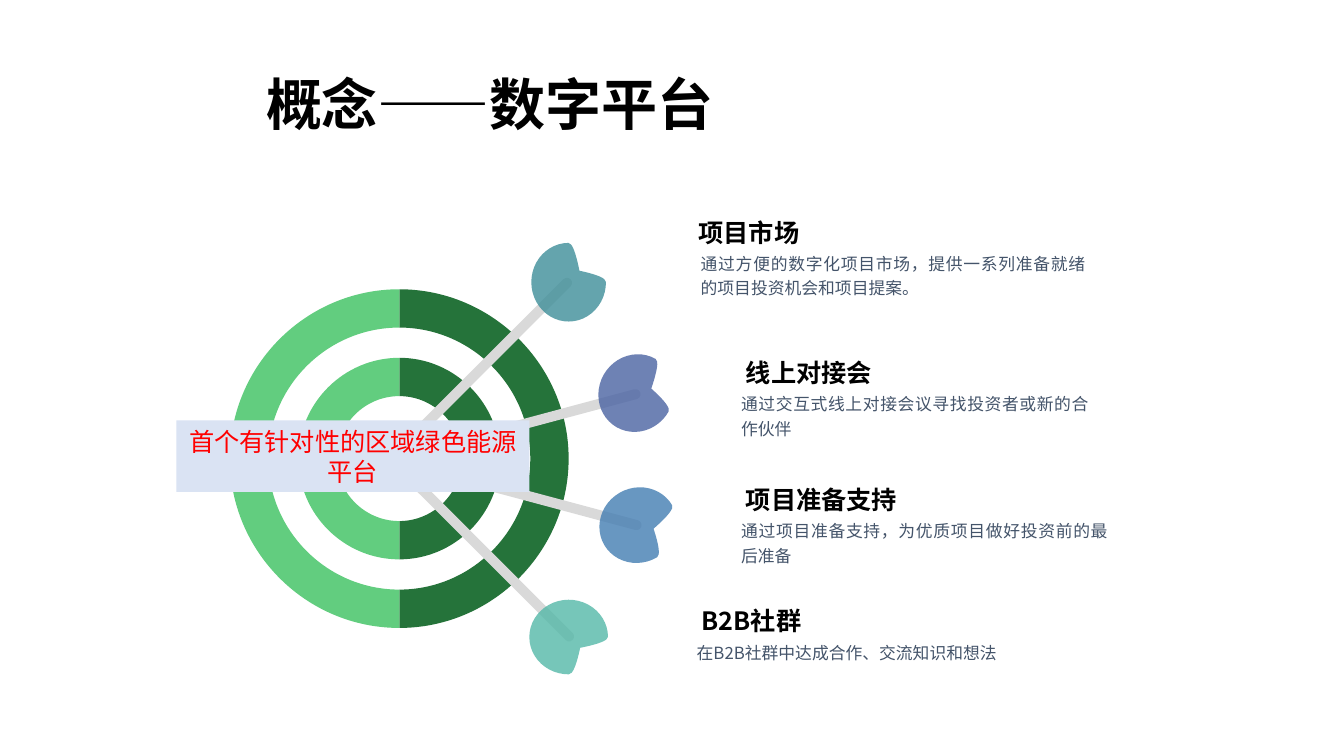
from dataclasses import dataclass
from typing import Any

from lxml.etree import SubElement
from pptx import Presentation
from pptx.dml.color import RGBColor
from pptx.enum.shapes import MSO_SHAPE
from pptx.enum.text import MSO_ANCHOR, PP_ALIGN
from pptx.oxml.ns import qn
from pptx.shapes.autoshape import Shape
from pptx.slide import Slide
from pptx.util import Inches, Pt


@dataclass(frozen=True)
class Theme:
    font: str = "Noto Sans CJK SC"
    ink: str = "000000"
    body_ink: str = "44546A"
    banner_ink: str = "FF0000"
    banner_fill: str = "DAE3F3"
    ring_dark: str = "25733A"
    ring_light: str = "62CD7F"
    shaft: str = "D9D9D9"
    title_size: int = 40
    heading_size: int = 18
    body_size: int = 12


@dataclass(frozen=True)
class Frame:
    left: float
    top: float
    width: float
    height: float

    def lengths(self) -> tuple[Inches, ...]:
        return tuple(map(Inches, (self.left, self.top, self.width, self.height)))


@dataclass(frozen=True)
class TextStyle:
    size: int
    color: str
    bold: bool
    frame: dict[str, Any]
    para: dict[str, Any]


@dataclass(frozen=True)
class Topic:
    heading: str
    heading_frame: Frame
    body: str
    body_frame: Frame


@dataclass(frozen=True)
class Dart:
    angle: float
    shaft_x: float
    shaft_y: float
    flight_x: float
    flight_y: float
    color: str


THEME = Theme()
TITLE = TextStyle(THEME.title_size, THEME.ink, True,
                  {"word_wrap": True, "vertical_anchor": MSO_ANCHOR.MIDDLE},
                  {"line_spacing": 0.9})
HEADING = TextStyle(THEME.heading_size, THEME.ink, True,
                    {"word_wrap": True, "vertical_anchor": MSO_ANCHOR.MIDDLE}, {})
BODY = TextStyle(THEME.body_size, THEME.body_ink, False,
                 {"word_wrap": True, "margin_left": Inches(0.09),
                  "margin_right": Inches(0.09), "margin_top": Inches(0.04),
                  "margin_bottom": Inches(0.04)},
                 {"alignment": PP_ALIGN.JUSTIFY, "line_spacing": 1.2,
                  "space_before": Pt(2.4)})
BANNER = TextStyle(THEME.heading_size, THEME.banner_ink, False,
                   {"word_wrap": True, "vertical_anchor": MSO_ANCHOR.MIDDLE},
                   {"alignment": PP_ALIGN.CENTER})

TOPICS = (
    Topic("项目市场", Frame(6.83, 2.11, 2.82, 0.4),
          "通过方便的数字化项目市场，提供一系列准备就绪的项目投资机会和项目提案。",
          Frame(6.86, 2.44, 4, 0.8)),
    Topic("线上对接会", Frame(7.3, 3.49, 2.98, 0.4),
          "通过交互式线上对接会议寻找投资者或新的合作伙伴", Frame(7.26, 3.83, 3.63, 0.56)),
    Topic("项目准备支持", Frame(7.3, 4.75, 3.82, 0.4),
          "通过项目准备支持，为优质项目做好投资前的最后准备", Frame(7.26, 5.09, 3.82, 0.56)),
    Topic("B2B社群", Frame(6.86, 5.96, 2.29, 0.4),
          "在B2B社群中达成合作、交流知识和想法", Frame(6.82, 6.3, 4, 0.56)),
)
DARTS = (
    Dart(75, 5.26, 4.19, 6.31, 3.9, "4A63A2"),
    Dart(45, 4.86, 3.57, 5.64, 2.8, "3E8E99"),
    Dart(135, 4.88, 5.55, 5.64, 6.32, "54B8A8"),
    Dart(105, 5.27, 4.93, 6.33, 5.21, "437DB2"),
)
TARGET_X, TARGET_Y = 3.96, 4.55
RINGS = ((0.31, 0), (1, 0.62), (1.68, 1.3))
ARC_HANDLE = 0.55
HALF_TURN = ((0, -1), (ARC_HANDLE, -1), (1, -ARC_HANDLE), (1, 0),
             (1, ARC_HANDLE), (ARC_HANDLE, 1), (0, 1))
SHAFT_WIDTH, SHAFT_LENGTH = 0.1, 2.26
FLIGHT_WIDTH, FLIGHT_HEIGHT = 0.74, 0.78
FLIGHT_TURN = -45.3
FLIGHT_NOTCH = 0.291
FLIGHT_ALPHA = 80


def apply_format(target: Any, values: dict[str, Any]) -> None:
    for name, value in values.items():
        setattr(target, name, value)


def paint(shape: Shape, color: str, alpha: int = 100) -> None:
    shape.shadow.inherit = False
    shape.line.fill.background()
    shape.fill.solid()
    shape.fill.fore_color.rgb = RGBColor.from_string(color)
    if alpha < 100:
        fill_color = next(shape.element.spPr.iter(qn("a:srgbClr")))
        SubElement(fill_color, qn("a:alpha")).set("val", str(alpha * 1000))


def write_text(shape: Shape, text: str, style: TextStyle) -> None:
    apply_format(shape.text_frame, style.frame)
    para = shape.text_frame.paragraphs[0]
    apply_format(para, style.para)
    span = para.add_run()
    span.text = text
    span.font.color.rgb = RGBColor.from_string(style.color)
    apply_format(span.font, {"name": THEME.font, "size": Pt(style.size), "bold": style.bold})
    properties = next(shape.element.iter(qn("a:rPr")))
    SubElement(properties, qn("a:ea")).set("typeface", THEME.font)


def add_text(page: Slide, frame: Frame, text: str, style: TextStyle) -> None:
    write_text(page.shapes.add_textbox(*frame.lengths()), text, style)


def round_arcs(shape: Shape) -> None:
    curve_length = len(HALF_TURN) // 2
    for start in list(shape.element.iter(qn("a:moveTo"))):
        lines = []
        for step in start.itersiblings():
            if step.tag != qn("a:lnTo"):
                break
            lines.append(step)
        arc_length = len(HALF_TURN) - 1
        for arc_lines in (lines[:arc_length], lines[arc_length + 1:]):
            for first in range(0, len(arc_lines) - curve_length + 1, curve_length):
                curve = SubElement(start.getparent(), qn("a:cubicBezTo"))
                arc_lines[first].addprevious(curve)
                for line in arc_lines[first:first + curve_length]:
                    curve.append(line[0])
                    line.getparent().remove(line)


def add_target_half(page: Slide, side: int, color: str) -> None:
    def arc(radius: float) -> list[tuple[int, int]]:
        return [(Inches(TARGET_X + side * radius * x), Inches(TARGET_Y + radius * y))
                for x, y in HALF_TURN]

    contours = [arc(outer) + (arc(inner)[::-1] if inner else []) for outer, inner in RINGS]
    builder = page.shapes.build_freeform(*contours[-1][0])
    builder.add_line_segments(contours[-1][1:], close=True)
    for contour in contours[:-1]:
        builder.move_to(*contour[0])
        builder.add_line_segments(contour[1:], close=True)
    half = builder.convert_to_shape()
    round_arcs(half)
    paint(half, color)


def add_dart(page: Slide, dart: Dart) -> None:
    group = page.shapes.add_group_shape()

    def add_part(kind: MSO_SHAPE, x: float, y: float, width: float, height: float,
                 turn: float, adjustment: float) -> Shape:
        frame = Frame(x - width / 2, y - height / 2, width, height)
        part = group.shapes.add_shape(kind, *frame.lengths())
        part.rotation = turn
        part.adjustments[0] = adjustment
        return part

    shaft = add_part(MSO_SHAPE.ROUNDED_RECTANGLE, dart.shaft_x, dart.shaft_y,
                     SHAFT_WIDTH, SHAFT_LENGTH, dart.angle, 0.5)
    paint(shaft, THEME.shaft)
    flight = add_part(MSO_SHAPE.TEAR, dart.flight_x, dart.flight_y, FLIGHT_WIDTH,
                      FLIGHT_HEIGHT, dart.angle + FLIGHT_TURN, FLIGHT_NOTCH)
    paint(flight, dart.color, FLIGHT_ALPHA)


def main() -> None:
    deck = Presentation()
    apply_format(deck, {"slide_width": Inches(13.33), "slide_height": Inches(7.5)})
    page = deck.slides.add_slide(deck.slide_layouts[6])
    add_text(page, Frame(2.54, 0.34, 8.62, 1.45), "概念——数字平台", TITLE)
    add_target_half(page, 1, THEME.ring_dark)
    add_target_half(page, -1, THEME.ring_light)
    for dart in DARTS:
        add_dart(page, dart)
    for topic in TOPICS:
        add_text(page, topic.heading_frame, topic.heading, HEADING)
        add_text(page, topic.body_frame, topic.body, BODY)
    banner = page.shapes.add_shape(MSO_SHAPE.RECTANGLE, *Frame(1.75, 4.17, 3.5, 0.71).lengths())
    paint(banner, THEME.banner_fill)
    write_text(banner, "首个有针对性的区域绿色能源平台", BANNER)
    deck.save("out.pptx")


if __name__ == "__main__":
    main()
